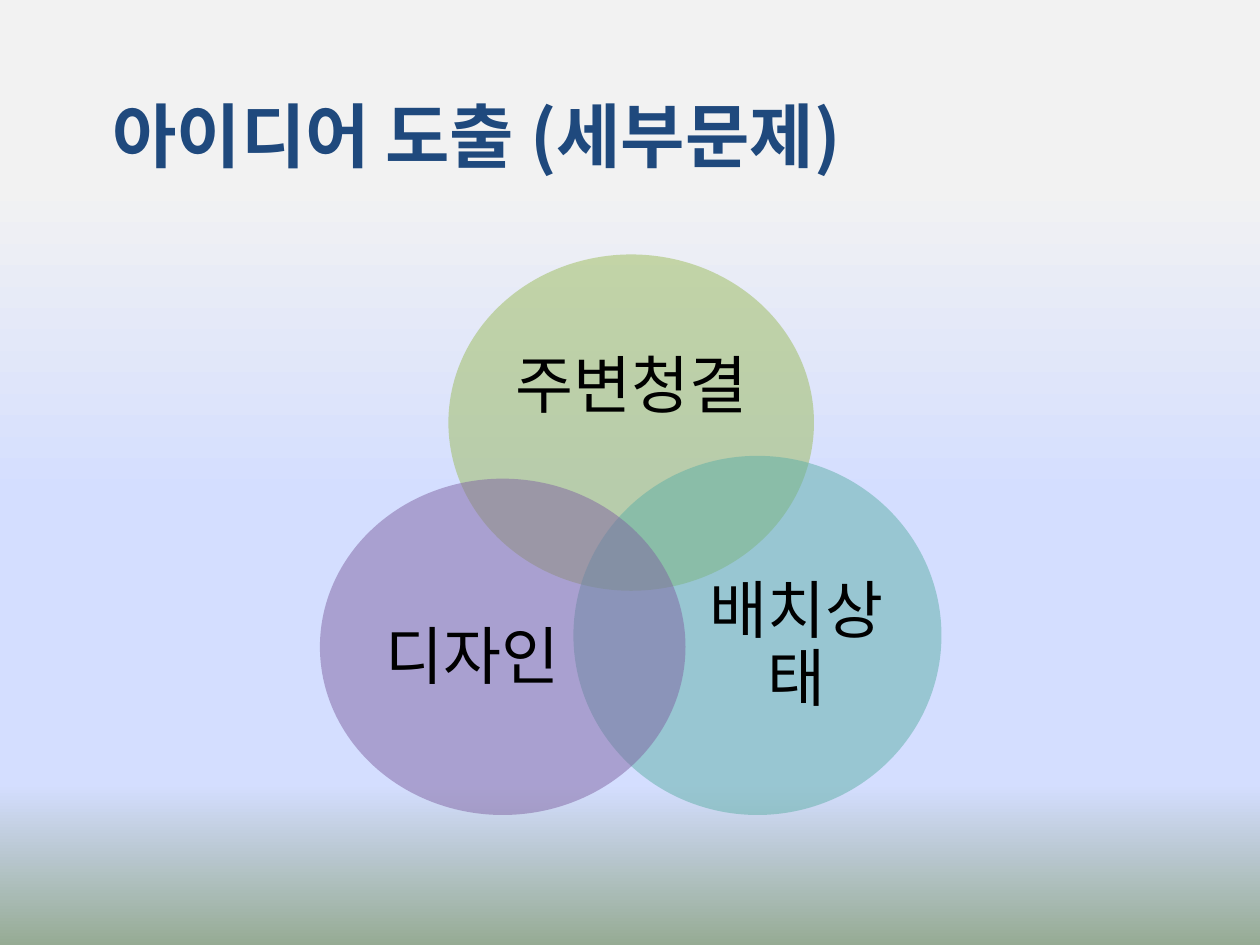
from lxml.etree import SubElement
from pptx import Presentation
from pptx.dml.color import RGBColor
from pptx.enum.shapes import MSO_SHAPE
from pptx.enum.text import MSO_ANCHOR, MSO_AUTO_SIZE, PP_ALIGN
from pptx.oxml.ns import qn
from pptx.util import Cm, Pt

FONT = "Noto Sans CJK KR"


def color(hex_string):
    return RGBColor.from_string(hex_string)


def style(paragraph, size, hex_string, bold=False):
    paragraph.alignment = PP_ALIGN.CENTER
    font = paragraph.font
    font.name, font.size, font.bold = FONT, Pt(size), bold
    font.color.rgb = color(hex_string)
    SubElement(paragraph._p.pPr.find(qn("a:defRPr")), qn("a:ea"), typeface=FONT)


prs = Presentation()
prs.slide_width, prs.slide_height = Cm(25.4), Cm(19.05)
slide = prs.slides.add_slide(prs.slide_layouts[5])

sky = slide.background.fill
sky.gradient()
sky.gradient_angle = 270
stops = slide.background._cSld.find(".//" + qn("a:gsLst"))
for stop in list(stops):
    stops.remove(stop)
for percent, tone in [(19, "F2F2F2"), (53, "D4DEFF"), (83, "D4DEFF"), (100, "96AB94")]:
    stop = SubElement(stops, qn("a:gs"), pos=str(percent * 1000))
    SubElement(stop, qn("a:srgbClr"), val=tone)

venn = slide.shapes.add_group_shape()
topics = [
    ("주변청결", "9BBB59", (9.04, 5.13, 7.37, 6.78), (10.03, 6.3, 5.41, 3.05)),
    ("배치상태", "5EAFA6", (11.56, 9.19, 7.42, 7.24), (13.84, 11.05, 4.45, 3.99)),
    ("디자인", "8064A2", (6.45, 9.65, 7.37, 6.78), (7.32, 11.42, 4.42, 3.73)),
]
for topic, tone, circle_box, label_box in topics:
    circle = venn.shapes.add_shape(MSO_SHAPE.OVAL, *map(Cm, circle_box))
    circle.shadow.inherit = False
    circle.line.fill.background()
    circle.fill.solid()
    circle.fill.fore_color.rgb = color(tone)
    tint = circle._element.spPr.find(qn("a:solidFill"))[0]
    SubElement(tint, qn("a:alpha"), val="50000")

    label = venn.shapes.add_textbox(*map(Cm, label_box)).text_frame
    label.word_wrap = True
    label.vertical_anchor = MSO_ANCHOR.MIDDLE
    label.margin_left = label.margin_right = label.margin_top = label.margin_bottom = 0
    label.text = topic
    label.paragraphs[0].line_spacing = 0.9
    style(label.paragraphs[0], 36, "000000")

title = slide.shapes.title
title.left, title.top, title.width, title.height = map(Cm, (1.3, 1.73, 16.61, 1.96))
heading = title.text_frame
heading.text = "아이디어 도출 (세부문제)"
heading.auto_size = MSO_AUTO_SIZE.NONE
heading.word_wrap = False
style(heading.paragraphs[0], 40, "1F497D", bold=True)

prs.save("out.pptx")
